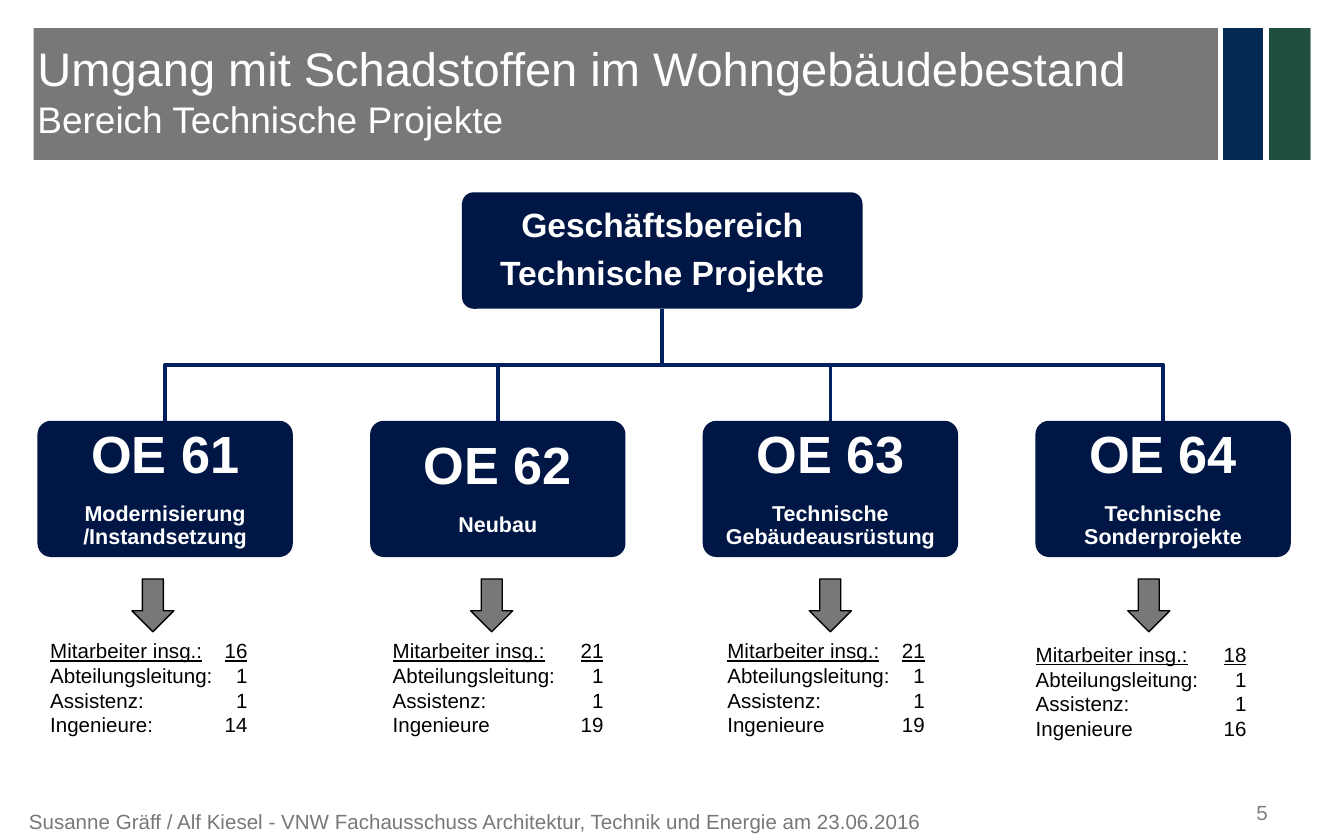
from dataclasses import dataclass

from lxml import etree
from pptx import Presentation
from pptx.dml.color import RGBColor
from pptx.enum.shapes import MSO_CONNECTOR as Connector, MSO_SHAPE as Preset
from pptx.enum.text import MSO_ANCHOR as Anchor, PP_ALIGN as Align
from pptx.oxml.ns import qn
from pptx.shapes.autoshape import Shape
from pptx.text.text import TextFrame
from pptx.util import Pt

FONT = "Arial"
WHITE, BLACK, GRAY = "FFFFFF", "000000", "787878"
BOX_NAVY, LINE_NAVY = "001746", "002060"
BAND_TOP, BAND_HEIGHT = 15.1, 70.6
HEAD_CENTER, HEAD_TOP, HEAD_WIDTH, HEAD_HEIGHT = 354.8, 103, 214.6, 62.4
UNIT_LEFT, UNIT_STEP = 20.1, 178.2
UNIT_TOP, UNIT_WIDTH, UNIT_HEIGHT = 225.4, 136.8, 73


@dataclass
class Unit:
    name: str
    task: str
    arrow_left: float
    staff_left: float
    staff_top: float
    staff_width: float
    tab: float
    total: int
    engineer_label: str
    engineers: int
    anchor: Anchor = Anchor.MIDDLE


UNITS = [
    Unit("OE 61", "Modernisierung /Instandsetzung", 70.7, 19.8, 338.4, 124.6, 105.8,
         16, "Ingenieure:", 14),
    Unit("OE 62", "Neubau", 252.2, 203.3, 338.4, 136, 113, 21, "Ingenieure", 19,
         Anchor.BOTTOM),
    Unit("OE 63", "Technische Gebäudeausrüstung", 433.6, 382.6, 338.4, 130.4, 105.8,
         21, "Ingenieure", 19),
    Unit("OE 64", "Technische Sonderprojekte", 604.2, 547.8, 340.4, 136, 113,
         18, "Ingenieure", 16),
]


def color(value: str) -> RGBColor:
    return RGBColor.from_string(value)


def add_filled(shapes, preset: Preset, left: float, top: float, width: float,
               height: float, fill: str) -> Shape:
    shape = shapes.add_shape(preset, Pt(left), Pt(top), Pt(width), Pt(height))
    shape.shadow.inherit = False
    shape.fill.solid()
    shape.fill.fore_color.rgb = color(fill)
    shape.line.fill.background()
    return shape


def add_text(shapes, left: float, top: float, width: float, height: float,
             text: str, ink: str, sizes: list[float]) -> TextFrame:
    box = shapes.add_textbox(Pt(left), Pt(top), Pt(width), Pt(height))
    set_text(box.text_frame, text, ink, sizes)
    return box.text_frame


def set_text(frame: TextFrame, text: str, ink: str, sizes: list[float]) -> None:
    """Write one paragraph per line of text, each with its own size."""
    frame.word_wrap = True
    frame.text = text
    for paragraph, size in zip(frame.paragraphs, sizes):
        for run in paragraph.runs:
            run.font.name = FONT
            run.font.size = Pt(size)
            run.font.color.rgb = color(ink)


def set_margins(frame: TextFrame, left: float, top: float, right: float,
                bottom: float) -> None:
    frame.margin_left, frame.margin_top = Pt(left), Pt(top)
    frame.margin_right, frame.margin_bottom = Pt(right), Pt(bottom)


def add_chart_box(shapes, left: float, top: float, width: float, height: float,
                  text: str, sizes: list[float], margin: float,
                  anchor: Anchor) -> None:
    box = add_filled(shapes, Preset.ROUNDED_RECTANGLE, left, top, width, height, BOX_NAVY)
    box.adjustments[0] = 0.1
    frame = box.text_frame
    set_text(frame, text, WHITE, sizes)
    set_margins(frame, margin, margin, margin, margin)
    frame.vertical_anchor = anchor
    for paragraph, size in zip(frame.paragraphs, sizes):
        paragraph.alignment = Align.CENTER
        paragraph.line_spacing = 0.9
        paragraph.space_after = Pt(round(size * 0.35, 1))
        for run in paragraph.runs:
            run.font.bold = True


def add_branch(shapes, center: float) -> None:
    """Draw the bent line from the head box to the unit box at center."""
    start = HEAD_TOP + HEAD_HEIGHT
    middle = (start + UNIT_TOP) / 2
    builder = shapes.build_freeform(Pt(HEAD_CENTER), Pt(start))
    corners = [(HEAD_CENTER, middle), (center, middle), (center, UNIT_TOP)]
    builder.add_line_segments([(Pt(x), Pt(y)) for x, y in corners], close=False)
    branch = builder.convert_to_shape()
    branch.shadow.inherit = False
    branch.fill.background()
    branch.line.color.rgb = color(LINE_NAVY)
    branch.line.width = Pt(2)


def add_staff(shapes, unit: Unit) -> None:
    arrow = add_filled(shapes, Preset.DOWN_ARROW, unit.arrow_left, 310.2, 22.5, 28.3, GRAY)
    arrow.line.color.rgb = color(BLACK)
    arrow.line.width = Pt(0.75)
    rows = [("Mitarbeiter insg.:", unit.total), ("Abteilungsleitung:", 1),
            ("Assistenz:", 1), (unit.engineer_label, unit.engineers)]
    text = "\n".join(f"{label}\t{count}" for label, count in rows)
    frame = add_text(shapes, unit.staff_left, unit.staff_top, unit.staff_width, 60.5,
                     text, BLACK, [11] * len(rows))
    for paragraph in frame.paragraphs:
        tabs = etree.SubElement(paragraph._p.get_or_add_pPr(), qn("a:tabLst"))
        etree.SubElement(tabs, qn("a:tab"), pos=str(Pt(unit.tab)), algn="r")
    for run in frame.paragraphs[0].runs:
        run.font.underline = True


def add_header(shapes) -> None:
    for left, width, fill in [(18, 684, GRAY), (678.2, 23.8, "204E3C"),
                              (654, 24.2, "022A52")]:
        add_filled(shapes, Preset.RECTANGLE, left, BAND_TOP, width, BAND_HEIGHT, fill)
    for x in (654, 678.2):
        divider = shapes.add_connector(Connector.STRAIGHT, Pt(x), Pt(BAND_TOP + BAND_HEIGHT),
                                       Pt(x), Pt(BAND_TOP))
        divider.line.color.rgb = color(WHITE)
        divider.line.width = Pt(2.8)
        etree.SubElement(divider._element.spPr, qn("a:effectLst"))
    title = add_text(shapes, 20.1, BAND_TOP, 629.3, 66.3,
                     "Umgang mit Schadstoffen im Wohngebäudebestand\n"
                     "Bereich Technische Projekte", WHITE, [25.2, 19.8])
    set_margins(title, 0, 3.6, 7.2, 3.6)
    title.vertical_anchor = Anchor.MIDDLE


def add_footer(shapes) -> None:
    add_text(shapes, 8.4, 430, 550, 20,
             "Susanne Gräff / Alf Kiesel - VNW Fachausschuss Architektur, "
             "Technik und Energie am 23.06.2016", GRAY, [11])
    add_text(shapes, 666, 425, 43.2, 24.5, "5", "808080", [11])


def main() -> None:
    presentation = Presentation()
    presentation.slide_width, presentation.slide_height = Pt(720), Pt(450)
    slide = presentation.slides.add_slide(presentation.slide_layouts[6])
    shapes = slide.shapes
    add_header(shapes)
    add_footer(shapes)
    add_chart_box(shapes, HEAD_CENTER - HEAD_WIDTH / 2, HEAD_TOP, HEAD_WIDTH, HEAD_HEIGHT,
                  "Geschäftsbereich\nTechnische Projekte", [18, 18], 5, Anchor.MIDDLE)
    for index, unit in enumerate(UNITS):
        left = UNIT_LEFT + index * UNIT_STEP
        add_branch(shapes, left + UNIT_WIDTH / 2)
        add_chart_box(shapes, left, UNIT_TOP, UNIT_WIDTH, UNIT_HEIGHT,
                      f"{unit.name}\n{unit.task}", [28, 11.5], 8.4, unit.anchor)
        add_staff(shapes, unit)
    presentation.save("out.pptx")


if __name__ == "__main__":
    main()
